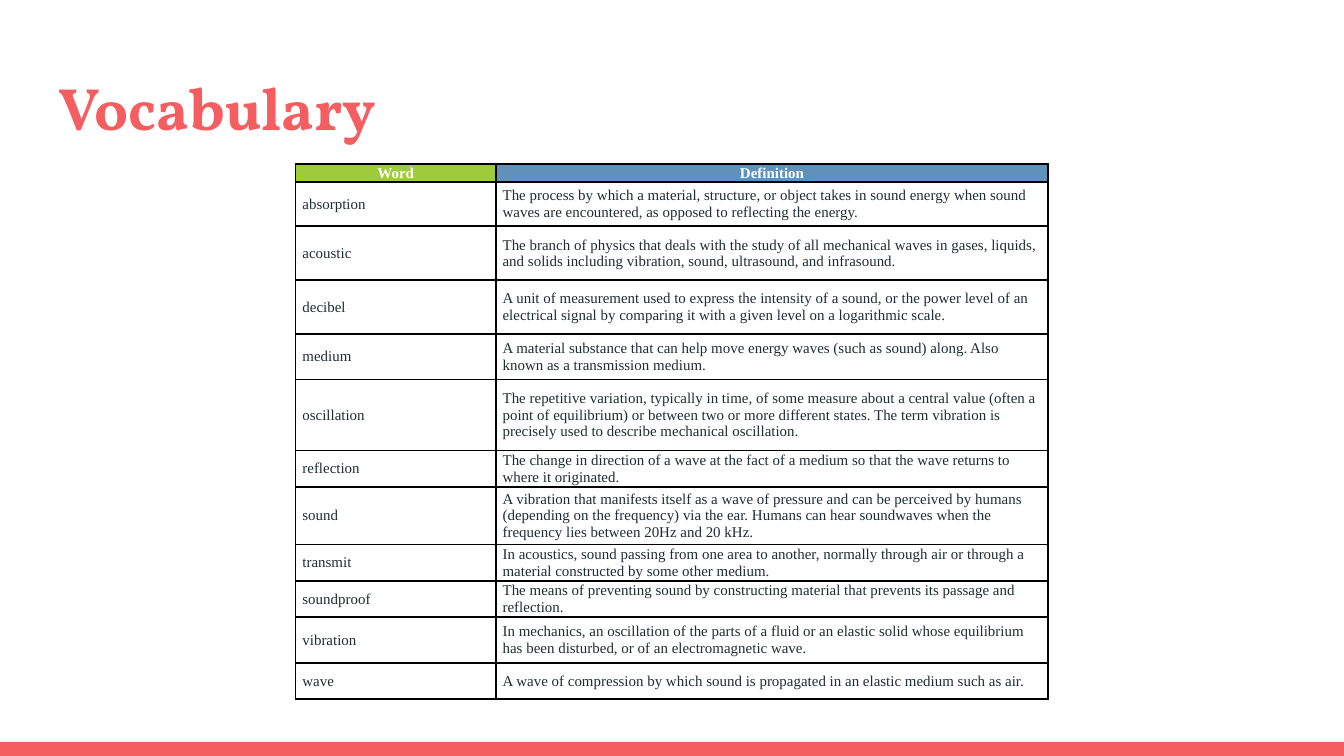
from lxml import etree
from pptx import Presentation
from pptx import util as u
from pptx.dml.color import RGBColor
from pptx.enum import shapes, text
from pptx.oxml import ns

COLORS = {
    "coral": "F55E61",
    "green": "9ECB3A",
    "blue": "5F91BA",
    "ink": "1E2D31",
    "white": "FFFFFF",
    "border": "000000",
}
BODY_FONT = "Times New Roman"


def write(frame, content, size=8, font=BODY_FONT, color="ink", bold=False,
          align=text.PP_ALIGN.LEFT):
    paragraph = frame.paragraphs[0]
    paragraph.alignment = align
    run = paragraph.add_run()
    run.text = content
    run.font.size = u.Pt(size)
    run.font.name = font
    run.font.bold = bold
    run.font.color.rgb = RGBColor.from_string(COLORS[color])


def add_borders(cell, width=1):
    properties = cell._tc.get_or_add_tcPr()
    # Borders come before the fill in the cell properties
    for position, side in enumerate(("a:lnL", "a:lnR", "a:lnT", "a:lnB")):
        line = etree.Element(ns.qn(side), w=str(u.Pt(width)))
        fill = etree.SubElement(line, ns.qn("a:solidFill"))
        etree.SubElement(fill, ns.qn("a:srgbClr"), val=COLORS["border"])
        properties.insert(position, line)


# Widescreen slide, 16:9
deck = Presentation()
deck.slide_width = u.Inches(10)
deck.slide_height = u.Inches(10 * 9 / 16)
slide = deck.slides.add_slide(deck.slide_layouts[6])

# Bottom band
band = slide.shapes.add_shape(shapes.MSO_SHAPE.RECTANGLE, u.Inches(0),
                              u.Inches(5.52), u.Inches(10), u.Inches(0.11))
band.shadow.inherit = False
band.fill.solid()
band.fill.fore_color.rgb = RGBColor.from_string(COLORS["coral"])
band.line.fill.background()

# Title
title = slide.shapes.add_textbox(u.Inches(0.34), u.Inches(0.43),
                                 u.Inches(9.32), u.Inches(0.68)).text_frame
title.word_wrap = True
title.vertical_anchor = text.MSO_ANCHOR.TOP
title.margin_left = title.margin_right = u.Inches(0.1)
title.margin_top = title.margin_bottom = u.Inches(0.1)
write(title, "Vocabulary", size=32, font="Vollkorn", color="coral", bold=True)

# Vocabulary entries: row height, word, definition
entries = [
    (0.13, "Word", "Definition"),
    (0.33, "absorption", "The process by which a material, structure, or object takes in "
     "sound energy when sound waves are encountered, as opposed to reflecting the energy."),
    (0.4, "acoustic", "The branch of physics that deals with the study of all mechanical "
     "waves in gases, liquids, and solids including vibration, sound, ultrasound, and "
     "infrasound."),
    (0.4, "decibel", "A unit of measurement used to express the intensity of a sound, or the "
     "power level of an electrical signal by comparing it with a given level on a "
     "logarithmic scale."),
    (0.34, "medium", "A material substance that can help move energy waves (such as sound) "
     "along. Also known as a transmission medium."),
    (0.53, "oscillation", "The repetitive variation, typically in time, of some measure about "
     "a central value (often a point of equilibrium) or between two or more different "
     "states. The term vibration is precisely used to describe mechanical oscillation."),
    (0.27, "reflection", "The change in direction of a wave at the fact of a medium so that "
     "the wave returns to where it originated."),
    (0.43, "sound", "A vibration that manifests itself as a wave of pressure and can be "
     "perceived by humans (depending on the frequency) via the ear. Humans can hear "
     "soundwaves when the frequency lies between 20Hz and 20 kHz."),
    (0.27, "transmit", "In acoustics, sound passing from one area to another, normally "
     "through air or through a material constructed by some other medium."),
    (0.27, "soundproof", "The means of preventing sound by constructing material that "
     "prevents its passage and reflection."),
    (0.34, "vibration", "In mechanics, an oscillation of the parts of a fluid or an elastic "
     "solid whose equilibrium has been disturbed, or of an electromagnetic wave."),
    (0.27, "wave", "A wave of compression by which sound is propagated in an elastic medium "
     "such as air."),
]

# Vocabulary table
column_widths = (1.49, 4.11)
header_fills = ("green", "blue")
vocabulary = slide.shapes.add_table(
    len(entries), len(column_widths), u.Inches(2.2), u.Inches(1.22),
    u.Inches(sum(column_widths)), u.Inches(sum(entry[0] for entry in entries))).table
vocabulary.horz_banding = False
for column, width in zip(vocabulary.columns, column_widths):
    column.width = u.Inches(width)

for row, (height, *contents) in enumerate(entries):
    vocabulary.rows[row].height = u.Inches(height)
    for col, content in enumerate(contents):
        cell = vocabulary.cell(row, col)
        cell.vertical_anchor = text.MSO_ANCHOR.MIDDLE
        cell.margin_left = cell.margin_right = u.Inches(0.05)
        cell.margin_top = cell.margin_bottom = u.Inches(0)
        cell.fill.solid()
        fill = header_fills[col] if row == 0 else "white"
        cell.fill.fore_color.rgb = RGBColor.from_string(COLORS[fill])
        add_borders(cell)
        if row == 0:
            write(cell.text_frame, content, color="white", bold=True,
                  align=text.PP_ALIGN.CENTER)
        else:
            write(cell.text_frame, content)

deck.save("out.pptx")
